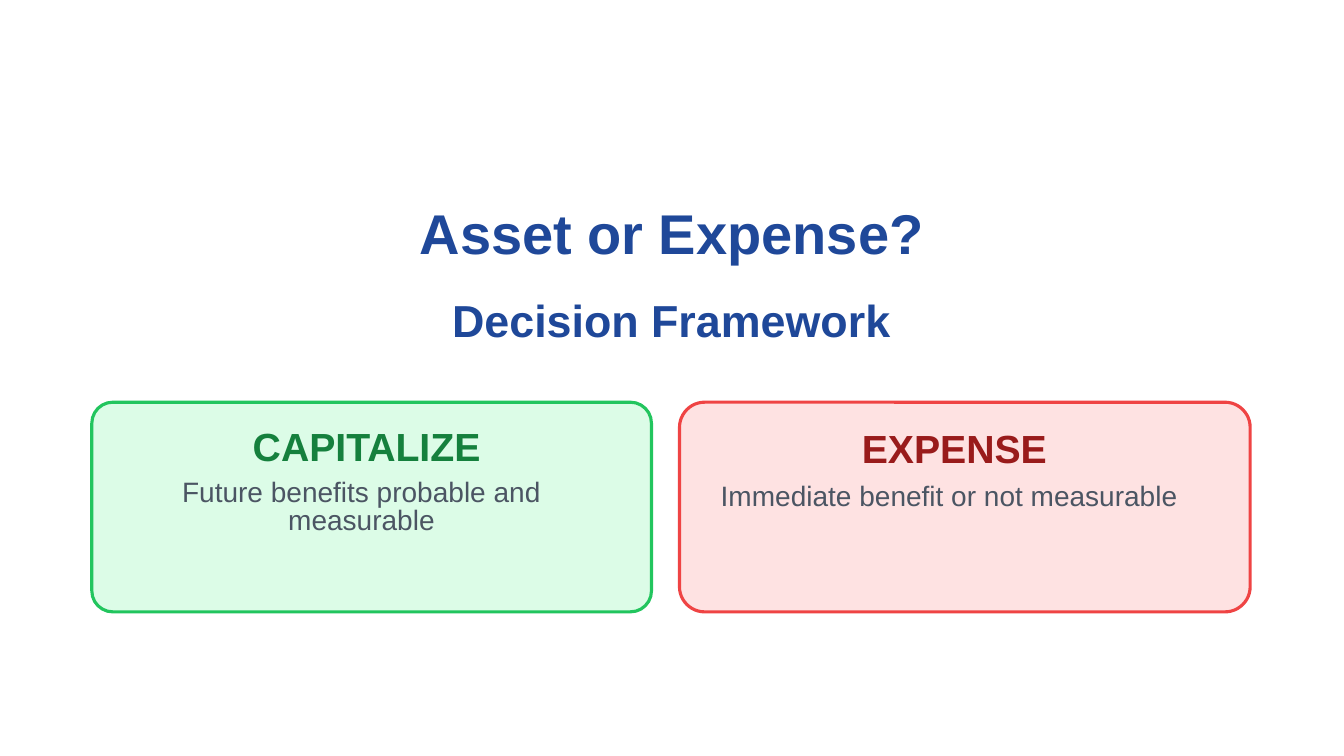
from pptx import Presentation
from pptx import util as u
from pptx.dml.color import RGBColor
from pptx.enum import shapes, text

COLORS = {
    "background": "FFFFFF",
    "title": "1F4899",
    "detail": "4B5563",
    "capitalize": {"fill": "DCFCE7", "line": "22C55E", "heading": "15803D"},
    "expense": {"fill": "FEE2E2", "line": "EF4444", "heading": "991B1B"},
}
COLUMN = u.Inches(13.33) / 100
ROW = u.Inches(7.5) / 100


def place(left, top, width, height):
    return [round(n) for n in (left * COLUMN, top * ROW, width * COLUMN, height * ROW)]


def write(holder, wording, size, color, spacing, bold=True, after=0):
    frame = holder.text_frame
    frame.text = wording
    frame.word_wrap = True
    frame.auto_size = text.MSO_AUTO_SIZE.NONE
    frame.vertical_anchor = text.MSO_ANCHOR.TOP
    frame.margin_left = frame.margin_right = frame.margin_top = frame.margin_bottom = 0
    paragraph = frame.paragraphs[0]
    paragraph.alignment = text.PP_ALIGN.CENTER
    paragraph.line_spacing = u.Pt(spacing)
    paragraph.space_before = u.Pt(0)
    paragraph.space_after = u.Pt(after)
    font = paragraph.runs[0].font
    font.name, font.size, font.bold = "Arial", u.Pt(size), bold
    font.color.rgb = RGBColor.from_string(color)


def add_titles(slide, left, top, width):
    title, subtitle = slide.shapes.title, slide.placeholders[1]
    title.left, title.top, title.width, title.height = place(left, top, width, 10.4)
    subtitle.left, subtitle.top, subtitle.width, subtitle.height = place(
        left, top + 14.8, width, 7.73)
    write(title, "Asset or Expense?", 40, COLORS["title"], 56, after=32)
    write(subtitle, "Decision Framework", 32, COLORS["title"], 33.6, after=24)


def add_choice(slide, box, corner, palette, heading, heading_drop, detail, detail_drop):
    left, top, width, height = box
    card = slide.shapes.add_shape(
        shapes.MSO_SHAPE.ROUNDED_RECTANGLE, *place(left, top, width, height))
    card.adjustments[0] = corner
    card.shadow.inherit = False
    card.fill.solid()
    card.fill.fore_color.rgb = RGBColor.from_string(palette["fill"])
    card.line.color.rgb = RGBColor.from_string(palette["line"])
    card.line.width = u.Pt(2.25)

    text_left, text_width = left + 2.1, 35.93
    heading_box = slide.shapes.add_textbox(
        *place(text_left + 0.38, top + heading_drop, text_width, 5.87))
    write(heading_box, heading, 28, palette["heading"], 25.2, after=8)
    detail_box = slide.shapes.add_textbox(
        *place(text_left, top + detail_drop, text_width, 9.2))
    write(detail_box, detail, 20, COLORS["detail"], 19.6, bold=False)


def main():
    deck = Presentation()
    deck.slide_width, deck.slide_height = u.Inches(13.33), u.Inches(7.5)
    slide = deck.slides.add_slide(deck.slide_layouts[0])
    slide.background.fill.solid()
    slide.background.fill.fore_color.rgb = RGBColor.from_string(COLORS["background"])

    add_titles(slide, 17.03, 24.8, 65.87)
    add_choice(slide, (6.83, 53.2, 41.64, 27.73), 0.1, COLORS["capitalize"],
               "CAPITALIZE", 4.27, "Future benefits probable and measurable", 10.4)
    add_choice(slide, (50.56, 53.2, 42.46, 27.73), 0.12, COLORS["expense"],
               "EXPENSE", 4.53, "Immediate benefit or not measurable", 10.93)
    deck.save("out.pptx")


if __name__ == "__main__":
    main()
